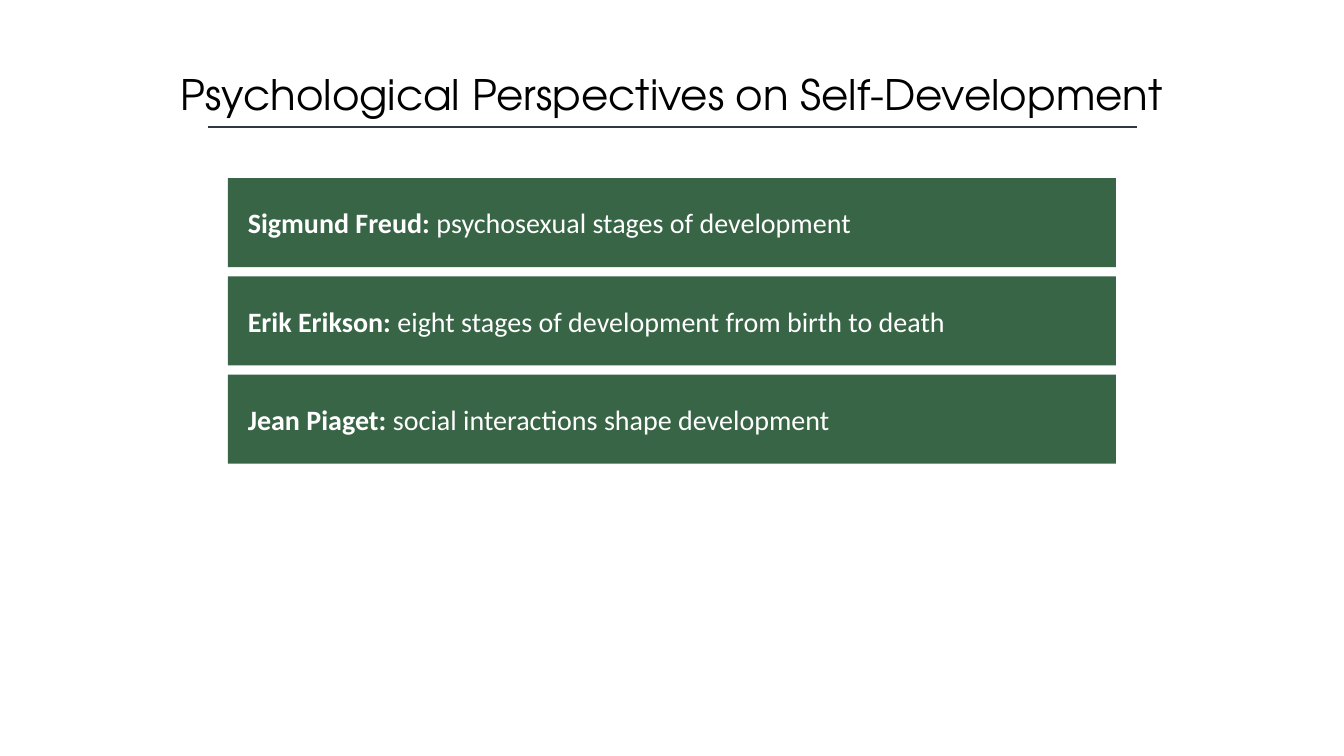
from lxml import etree
from pptx import Presentation
from pptx import util as u
from pptx.dml.color import RGBColor
from pptx.enum import shapes, text
from pptx.oxml.ns import qn

COLS, ROWS = 160, 90
GREEN, DARK, WHITE, BLACK = "386546", "323542", "FFFFFF", "000000"
HEAD = {"name": "TeX Gyre Adventor", "size": u.Pt(30), "bold": False}
BODY = {"name": "Calibri", "size": u.Pt(20), "bold": False}


def tint(code):
    return RGBColor.from_string(code)


class Deck:
    """Holds the slide, its grid and the style of each element."""

    def __init__(self):
        self.prs = Presentation()
        self.prs.slide_width = u.Inches(13.33)
        self.prs.slide_height = u.Inches(7.5)
        self.slide = self.prs.slides.add_slide(self.prs.slide_layouts[6])

    def grid(self, *cells):
        sides = (self.prs.slide_width / COLS, self.prs.slide_height / ROWS)
        return [u.Emu(round(n * sides[i % 2])) for i, n in enumerate(cells)]

    def letter(self, shape, runs, style, color, align):
        frame = shape.text_frame
        frame.word_wrap = True
        frame.auto_size = text.MSO_AUTO_SIZE.SHAPE_TO_FIT_TEXT
        para = frame.paragraphs[0]
        para.alignment = align
        for words, extra in runs:
            run = para.add_run()
            run.text = words
            run.font.color.rgb = tint(color)
            for key, val in {**style, **extra}.items():
                setattr(run.font, key, val)

    def title(self, words, *cells):
        box = self.slide.shapes.add_textbox(*self.grid(*cells))
        self.letter(box, [(words, {})], HEAD, BLACK, text.PP_ALIGN.CENTER)

    def rule(self, *cells):
        line = self.slide.shapes.add_connector(
            shapes.MSO_CONNECTOR.STRAIGHT, *self.grid(*cells))
        line.line.color.rgb = tint(DARK)
        line.line.width = u.Pt(1)
        etree.SubElement(line._element.spPr, qn("a:effectLst"))

    def rect(self, group, *cells):
        shape = group.shapes.add_shape(
            shapes.MSO_SHAPE.RECTANGLE, *self.grid(*cells))
        shape.shadow.inherit = False
        shape.fill.solid()
        shape.fill.fore_color.rgb = tint(GREEN)
        shape.line.fill.background()
        return shape

    def band(self, name, idea, top):
        group = self.slide.shapes.add_group_shape()
        self.rect(group, 27.12, top, 105.72, 10.6)
        label = self.rect(group, 28.32, top + 2.66, 102.5, 5.28)
        runs = [(name + ": ", {"bold": True}), (idea, {})]
        self.letter(label, runs, BODY, WHITE, text.PP_ALIGN.LEFT)


def main():
    deck = Deck()

    # Heading with its rule
    deck.title("Psychological Perspectives on Self-Development",
               20, 7.56, 120, 7.32)
    deck.rule(24.72, 15.12, 135.36, 15.12)

    # One band for each thinker
    bands = [
        ("Sigmund Freud", "psychosexual stages of development"),
        ("Erik Erikson", "eight stages of development from birth to death"),
        ("Jean Piaget", "social interactions shape development"),
    ]
    for i, (name, idea) in enumerate(bands):
        deck.band(name, idea, 21.2 + 11.7 * i)

    deck.prs.save("out.pptx")


if __name__ == "__main__":
    main()
